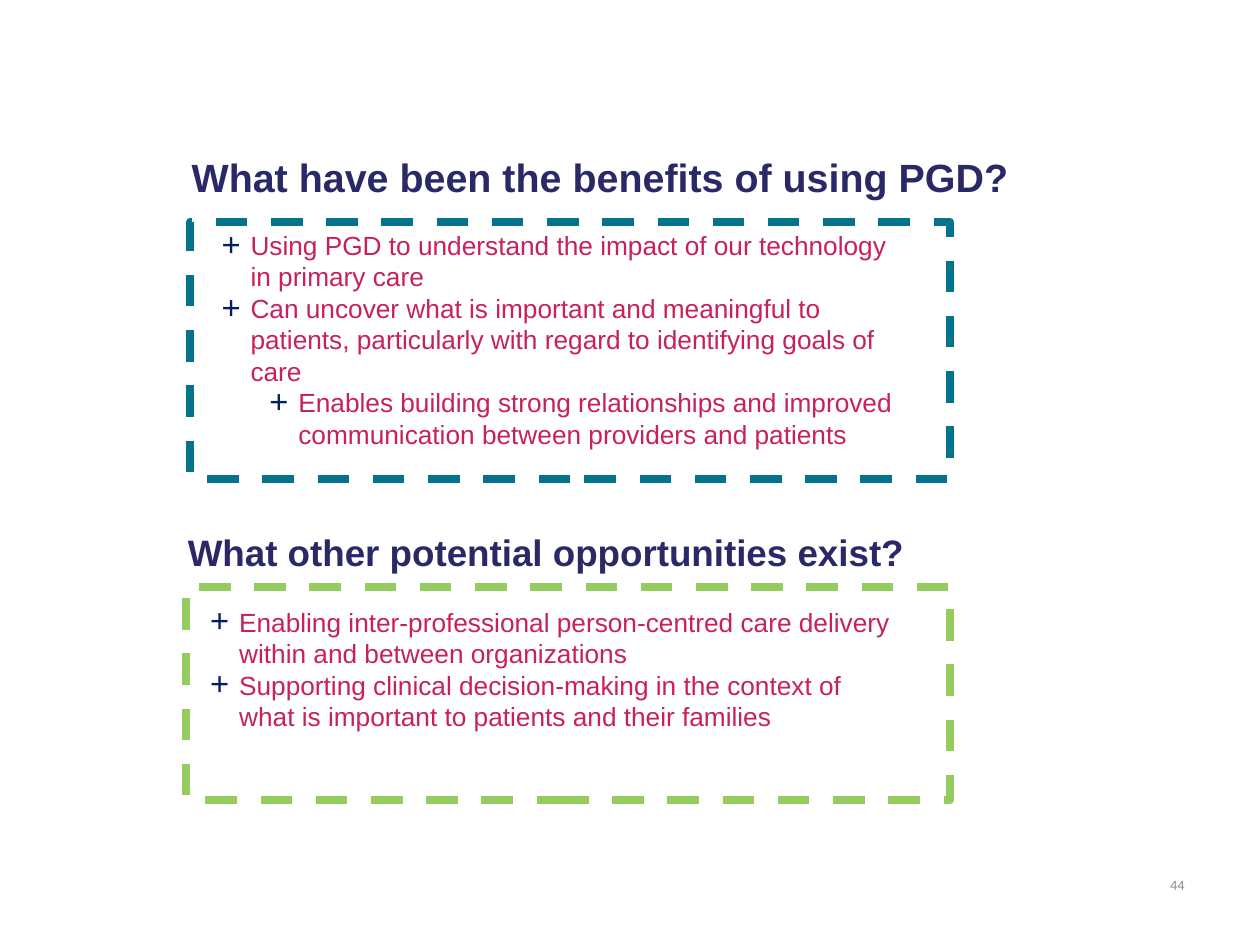
from lxml.etree import SubElement
from pptx import Presentation
from pptx.dml.color import RGBColor
from pptx.enum.dml import MSO_LINE
from pptx.enum.shapes import MSO_SHAPE
from pptx.enum.text import MSO_ANCHOR, MSO_AUTO_SIZE, PP_ALIGN
from pptx.oxml.ns import qn
from pptx.util import Inches, Pt

NAVY, PINK, GREY = "2A2967", "C8205E", "8C8C8C"
TEAL, GREEN, WHITE, MARK = "03748C", "94CC60", "FFFFFF", "002060"
HANG = 0.23

BENEFITS = [
    (0, "Using PGD to understand the impact of our technology in primary care"),
    (0, "Can uncover what is important and meaningful to patients, "
        "particularly with regard to identifying goals of care"),
    (1, "Enables building strong relationships and improved "
        "communication between providers and patients"),
]
OPTIONS = [
    (0, "Enabling inter-professional person-centred care delivery "
        "within and between organizations"),
    (0, "Supporting clinical decision-making in the context of "
        "what is important to patients and their families"),
]


def color(text):
    return RGBColor.from_string(text)


def bullet(para, level):
    """Give the paragraph a hanging plus sign."""
    para.level = level
    props = para._p.get_or_add_pPr()
    props.set("marL", str(Inches(HANG + 0.38 * level)))
    props.set("indent", str(-Inches(HANG)))
    tint = SubElement(props, qn("a:buClr"))
    SubElement(tint, qn("a:srgbClr"), val=MARK)
    SubElement(props, qn("a:buSzPct"), val="125000")
    SubElement(props, qn("a:buFont"), typeface="Arial")
    SubElement(props, qn("a:buChar"), char="+")


class Page:
    """Holds the slide and its text style."""

    def __init__(self, deck, font="Arial"):
        self.slide = deck.slides.add_slide(deck.slide_layouts[5])
        self.font = font

    def run(self, para, text, size, tint, bold=False, font=None):
        run = para.add_run()
        run.text = text
        run.font.name = font or self.font
        run.font.size = Pt(size)
        run.font.bold = bold
        run.font.color.rgb = color(tint)

    def box(self, place):
        box = self.slide.shapes.add_textbox(*map(Inches, place))
        box.text_frame.word_wrap = True
        return box.text_frame

    def title(self, place, text, size):
        shape = self.slide.shapes.title
        shape.left, shape.top, shape.width, shape.height = map(Inches, place)
        frame = shape.text_frame
        frame.vertical_anchor = MSO_ANCHOR.MIDDLE
        frame.auto_size = MSO_AUTO_SIZE.NONE
        para = frame.paragraphs[0]
        para.alignment = PP_ALIGN.LEFT
        self.run(para, text, size, NAVY, bold=True)

    def heading(self, place, text, size):
        frame = self.box(place)
        frame.vertical_anchor = MSO_ANCHOR.MIDDLE
        frame.margin_left = frame.margin_right = Inches(0.07)
        frame.margin_top = frame.margin_bottom = Inches(0.04)
        self.run(frame.paragraphs[0], text, size, NAVY, bold=True)

    def panel(self, place, tint):
        shape = self.slide.shapes.add_shape(MSO_SHAPE.RECTANGLE, *map(Inches, place))
        shape.shadow.inherit = False
        shape.fill.solid()
        shape.fill.fore_color.rgb = color(WHITE)
        shape.line.color.rgb = color(tint)
        shape.line.width = Pt(4.5)
        shape.line.dash_style = MSO_LINE.DASH

    def points(self, place, items):
        frame = self.box(place)
        frame.auto_size = MSO_AUTO_SIZE.SHAPE_TO_FIT_TEXT
        for i, (level, text) in enumerate(items):
            para = frame.add_paragraph() if i else frame.paragraphs[0]
            bullet(para, level)
            self.run(para, text, 15, PINK)

    def number(self, place, text):
        frame = self.box(place)
        frame.vertical_anchor = MSO_ANCHOR.MIDDLE
        para = frame.paragraphs[0]
        para.alignment = PP_ALIGN.RIGHT
        self.run(para, text, 8.2, GREY, font="Calibri")


def main():
    deck = Presentation()
    deck.slide_width, deck.slide_height = Inches(10), Inches(7.5)
    page = Page(deck)
    page.title((1.42, 1.05, 7.08, 0.71),
               "What have been the benefits of using PGD?", 22.5)
    page.number((8.94, 6.82, 0.56, 0.4), "44")
    page.panel((1.51, 1.76, 6.03, 2.04), TEAL)
    page.points((1.66, 1.77, 5.68, 1.87), BENEFITS)
    page.heading((1.42, 4.02, 5.92, 0.72),
                 "What other potential opportunities exist?", 21)
    page.panel((1.48, 4.66, 6.06, 1.69), GREEN)
    page.points((1.57, 4.76, 5.63, 1.57), OPTIONS)
    deck.save("out.pptx")


if __name__ == "__main__":
    main()
